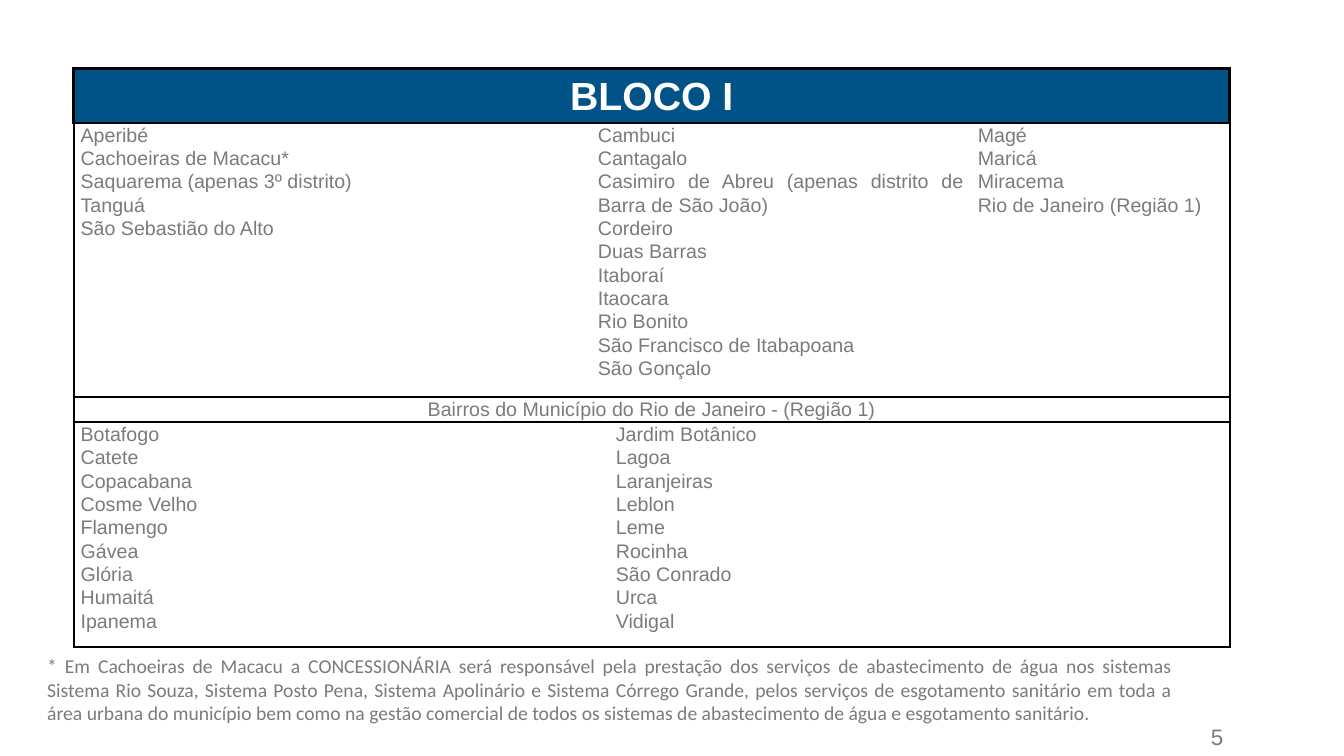
from lxml import etree
from pptx import Presentation
from pptx.dml.color import RGBColor
from pptx.enum.text import MSO_ANCHOR, PP_ALIGN as AL
from pptx.oxml.ns import qn
from pptx.util import Inches, Pt

BLUE = RGBColor(0x00, 0x52, 0x87)
GRAY = RGBColor(0x7B, 0x7B, 0x7B)
WHITE = RGBColor(0xFF, 0xFF, 0xFF)
BLACK = RGBColor(0x00, 0x00, 0x00)

# Content: each row lists (lines, columns spanned)
ROWS = [
    [(["BLOCO I"], 5)],
    [(["Aperibé", "Cachoeiras de Macacu*", "Saquarema (apenas 3º distrito)",
       "Tanguá", "São Sebastião do Alto"], 1),
     (["Cambuci", "Cantagalo",
       "Casimiro de Abreu (apenas distrito de Barra de São João)",
       "Cordeiro", "Duas Barras", "Itaboraí", "Itaocara", "Rio Bonito",
       "São Francisco de Itabapoana", "São Gonçalo"], 3),
     (["Magé", "Maricá", "Miracema", "Rio de Janeiro (Região 1)"], 1)],
    [(["Bairros do Município do Rio de Janeiro - (Região 1)"], 5)],
    [(["Botafogo", "Catete", "Copacabana", "Cosme Velho", "Flamengo",
       "Gávea", "Glória", "Humaitá", "Ipanema"], 2),
     (["Jardim Botânico", "Lagoa", "Laranjeiras", "Leblon", "Leme",
       "Rocinha", "São Conrado", "Urca", "Vidigal"], 1),
     ([], 2)],
]
NOTE = ("* Em Cachoeiras de Macacu a CONCESSIONÁRIA será responsável pela "
        "prestação dos serviços de abastecimento de água nos sistemas Sistema "
        "Rio Souza, Sistema Posto Pena, Sistema Apolinário e Sistema Córrego "
        "Grande, pelos serviços de esgotamento sanitário em toda a área urbana "
        "do município bem como na gestão comercial de todos os sistemas de "
        "abastecimento de água e esgotamento sanitário.")
PAGE = "5"

# Grid and formats
COLS = [5.13, 0.17, 3.42, 0.17, 2.57]
HEIGHTS = [0.54, 2.72, 0.25, 2.22]
LEFT, TOP = 0.73, 0.68
TITLE = dict(name="Arial", size=Pt(28), bold=True)
BODY = dict(name="Arial", size=Pt(14), bold=False)
FOOTNOTE = dict(name="Calibri", size=Pt(14))
NUMBER = dict(name="Arial", size=Pt(16))


def write(tf, lines, fmt, color, align, spacing=None):
    for i, line in enumerate(lines):
        p = tf.add_paragraph() if i else tf.paragraphs[0]
        p.alignment = align
        if spacing:
            p.line_spacing = spacing
        r = p.add_run()
        r.text = line
        for key, value in fmt.items():
            setattr(r.font, key, value)
        r.font.color.rgb = color


def set_borders(cell, widths):
    """Line widths in points for left, right, top, bottom; 0 draws none."""
    tcPr = cell._tc.get_or_add_tcPr()
    for i, (side, width) in enumerate(zip("LRTB", widths)):
        ln = etree.Element(qn("a:ln" + side), w=str(Pt(width)))
        if width:
            fill = etree.SubElement(ln, qn("a:solidFill"))
            etree.SubElement(fill, qn("a:srgbClr"), val=str(BLACK))
        else:
            etree.SubElement(ln, qn("a:noFill"))
        tcPr.insert(i, ln)


def add_box(s, at, text, fmt, align, inset=None):
    tf = s.shapes.add_textbox(*map(Inches, at)).text_frame
    tf.word_wrap = True
    if inset is not None:
        for side in ("left", "top", "right", "bottom"):
            setattr(tf, "margin_" + side, Inches(inset))
    write(tf, [text], fmt, GRAY, align)


def add_table(s):
    frame = s.shapes.add_table(len(ROWS), len(COLS), Inches(LEFT), Inches(TOP),
                               Inches(sum(COLS)), Inches(sum(HEIGHTS)))
    table = frame.table
    table.first_row = table.horz_banding = False
    for col, width in zip(table.columns, COLS):
        col.width = Inches(width)
    for row, height in zip(table.rows, HEIGHTS):
        row.height = Inches(height)

    for r, groups in enumerate(ROWS):
        header = r == 0
        side = 2.25 if header else 1.5
        top = 2.25 if r < 2 else 1.5
        start = 0
        for lines, span in groups:
            end = start + span
            for c in range(start, end):
                cell = table.cell(r, c)
                cell.margin_left = cell.margin_right = Inches(0.07)
                cell.margin_top = cell.margin_bottom = 0
                cell.vertical_anchor = MSO_ANCHOR.TOP
                if header:
                    cell.fill.solid()
                    cell.fill.fore_color.rgb = BLUE
                else:
                    cell.fill.background()
                set_borders(cell, (side if start == 0 else 0,
                                   side if end == len(COLS) else 0, top, side
                                   ))
            cell = table.cell(r, start)
            if span > 1:
                cell.merge(table.cell(r, end - 1))
            align = (AL.CENTER if span == len(COLS)
                     else AL.LEFT if r == 1 and start == 0 else AL.JUSTIFY)
            write(cell.text_frame, lines, TITLE if header else BODY,
                  WHITE if header else GRAY, align, 1.15 if header else 1.06)
            start = end


def main():
    prs = Presentation()
    prs.slide_width, prs.slide_height = Inches(13.33), Inches(7.5)
    s = prs.slides.add_slide(prs.slide_layouts[6])
    # Page number, table of towns, footnote
    add_box(s, (11.96, 7.12, 1.38, 0.37), PAGE, NUMBER, AL.LEFT, 0.05)
    add_table(s)
    add_box(s, (0.37, 6.44, 11.36, 0.81), NOTE, FOOTNOTE, AL.JUSTIFY)
    prs.save("out.pptx")


if __name__ == "__main__":
    main()
